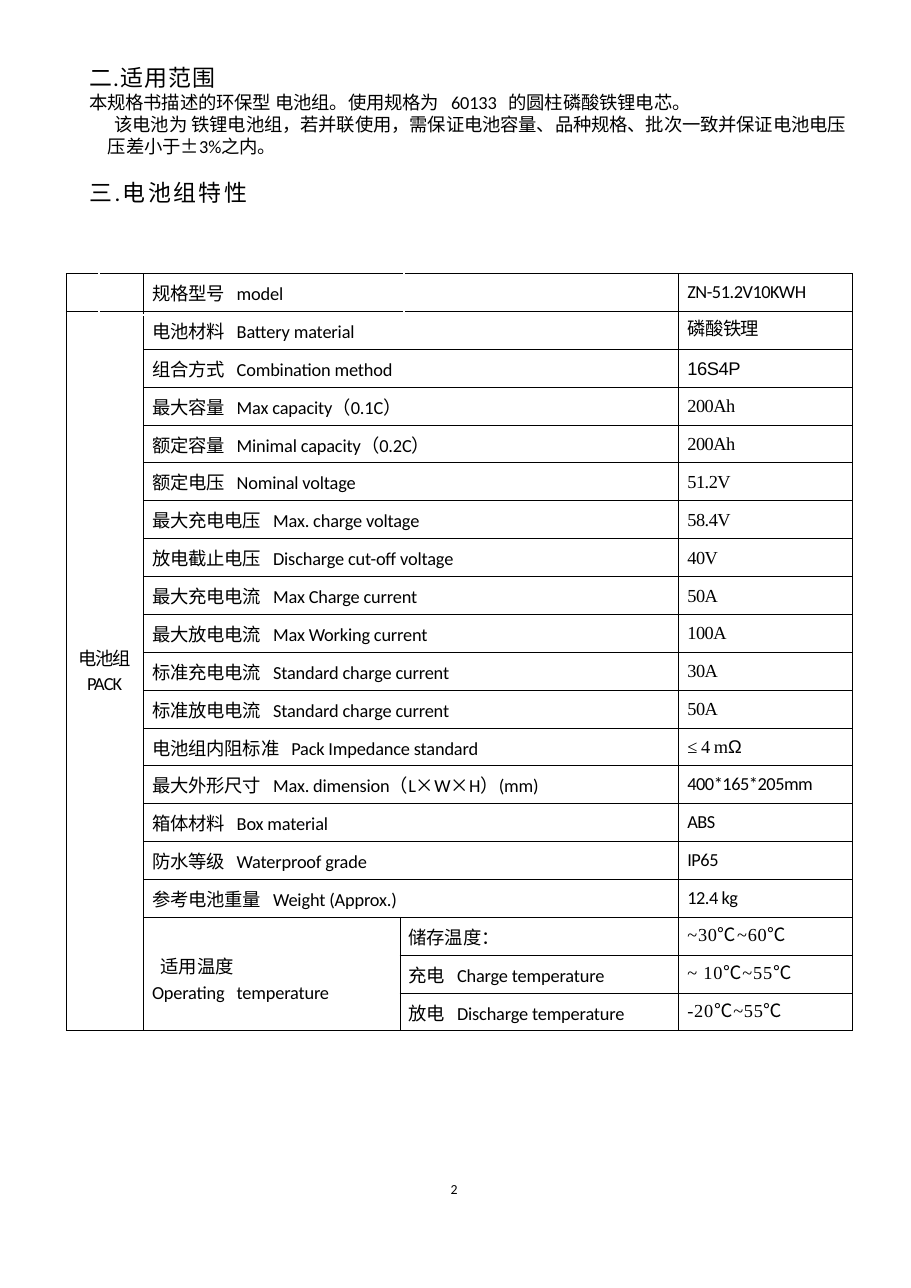
from itertools import groupby

from lxml.etree import SubElement
from pptx import Presentation
from pptx.dml.color import RGBColor
from pptx.enum.shapes import MSO_SHAPE
from pptx.enum.text import MSO_ANCHOR, MSO_AUTO_SIZE, PP_ALIGN
from pptx.oxml.ns import qn
from pptx.util import Inches, Pt

BLACK = RGBColor(0x00, 0x00, 0x00)
WHITE = RGBColor(0xFF, 0xFF, 0xFF)
CHINESE, LATIN, SERIF, SANS = "Noto Sans CJK SC", "Calibri", "Times New Roman", "Arial"
COLUMNS, ROWS = 827, 1169  # fine page grid
GAP = "|"  # marks a widened space between words

# Label, value, Latin font of the value
PROPERTIES = [
    ("规格型号|model", "ZN-51.2V10KWH", LATIN),
    ("电池材料|Battery material", "磷酸铁理", LATIN),
    ("组合方式|Combination method", "16S4P", SANS),
    ("最大容量|Max capacity（0.1C）", "200Ah", SERIF),
    ("额定容量|Minimal capacity（0.2C）", "200Ah", SERIF),
    ("额定电压|Nominal voltage", "51.2V", SERIF),
    ("最大充电电压|Max. charge voltage", "58.4V", SERIF),
    ("放电截止电压|Discharge cut-off voltage", "40V", SERIF),
    ("最大充电电流|Max Charge current", "50A", SERIF),
    ("最大放电电流|Max Working current", "100A", SERIF),
    ("标准充电电流|Standard charge current", "30A", SERIF),
    ("标准放电电流|Standard charge current", "50A", SERIF),
    ("电池组内阻标准|Pack Impedance standard", "≤ 4 mΩ", SERIF),
    ("最大外形尺寸|Max. dimension（L×W×H）(mm)", "400*165*205mm", LATIN),
    ("箱体材料|Box material", "ABS", LATIN),
    ("防水等级|Waterproof grade", "IP65", LATIN),
    ("参考电池重量|Weight (Approx.)", "12.4 kg", LATIN),
]
TEMPERATURES = [
    ("储存温度：", "~30℃~60℃"),
    ("充电|Charge temperature", "~ 10℃~55℃"),
    ("放电|Discharge temperature", "-20℃~55℃"),
]


def font_for(char, latin):
    """Choose the font of one character by its script."""
    if ord(char) > 0x2E7F or char in "℃×±":
        return CHINESE
    return SANS if char == "Ω" else latin


class SpecificationPage:
    def __init__(self, deck):
        self.page = deck.slides.add_slide(deck.slide_layouts[1])
        self.column = deck.slide_width / COLUMNS
        self.row = deck.slide_height / ROWS

    def area(self, left, top, width, height):
        return (round(left * self.column), round(top * self.row),
                round(width * self.column), round(height * self.row))

    def fill_para(self, para, text, latin=LATIN, size=12, spacing=-0.1, **layout):
        """Fill a paragraph, with one span per font."""
        layout = {"line_spacing": Pt(14.4), "space_before": Pt(0),
                  "alignment": PP_ALIGN.LEFT} | layout
        indent = {"marL": layout.pop("margin", 0), "indent": layout.pop("indent", 0)}
        for name, value in layout.items():
            setattr(para, name, value)
        properties = para._p.get_or_add_pPr()
        for name, inches in indent.items():
            properties.set(name, str(Inches(inches)))
        SubElement(properties, qn("a:buNone"))
        for (font, is_gap), chars in groupby(
                text, lambda char: (font_for(char, latin), char == GAP)):
            span = para.add_run()
            span.text = " " if is_gap else "".join(chars)
            for name, value in {"size": Pt(size), "name": font, "bold": False}.items():
                setattr(span.font, name, value)
            span.font.color.rgb = BLACK
            marks = span._r.get_or_add_rPr()
            marks.set("spc", str(round((5 if is_gap else spacing) * 100)))
            SubElement(marks, qn("a:ea")).set("typeface", font)

    def text(self, box, lines, wrap=True):
        """Fill a text shape; each line is a pair of text and format."""
        frame = box.text_frame
        settings = {"margin_left": 0, "margin_top": 0, "margin_right": 0,
                    "margin_bottom": 0, "word_wrap": wrap,
                    "auto_size": MSO_AUTO_SIZE.NONE, "vertical_anchor": MSO_ANCHOR.TOP}
        for name, value in settings.items():
            setattr(frame, name, value)
        for number, (words, style) in enumerate(lines):
            para = frame.add_paragraph() if number else frame.paragraphs[0]
            self.fill_para(para, words, **style)

    def placeholder(self, index, area, lines):
        box = self.page.placeholders[index]
        box.left, box.top, box.width, box.height = self.area(*area)
        self.text(box, lines)

    def text_box(self, area, lines):
        self.text(self.page.shapes.add_textbox(*self.area(*area)), lines, wrap=False)

    def outline(self, area, color, width):
        frame = self.page.shapes.add_shape(MSO_SHAPE.RECTANGLE, *self.area(*area))
        frame.shadow.inherit = False
        frame.fill.background()
        frame.line.color.rgb = color
        frame.line.width = Pt(width)

    def cell(self, cell, lines, lower=0.0, **style):
        """Set the lines of a table cell, moved down a little if asked."""
        cell.margin_top = Inches(lower)
        for number, line in enumerate(lines):
            frame = cell.text_frame
            para = frame.add_paragraph() if number else frame.paragraphs[0]
            self.fill_para(para, line, **style)

    def table(self, area, widths, row_count):
        box = self.page.shapes.add_table(row_count, len(widths), *self.area(*area))
        table = box.table
        for name in ("first_row", "horz_banding"):
            setattr(table, name, False)
        for column, width in zip(table.columns, widths):
            column.width = round(width * self.column)
        for cell in table.iter_cells():
            for name in ("margin_left", "margin_right", "margin_top", "margin_bottom"):
                setattr(cell, name, 0)
            cell.vertical_anchor = MSO_ANCHOR.MIDDLE
            cell.text_frame.paragraphs[0].font.size = Pt(12)
            self.borders(cell)
            cell.fill.background()
        return table

    def borders(self, cell):
        properties = cell._tc.get_or_add_tcPr()
        for side in ("lnL", "lnR", "lnT", "lnB"):
            line = SubElement(properties, qn(f"a:{side}"), w=str(Pt(0.25)))
            fill = SubElement(line, qn("a:solidFill"))
            SubElement(fill, qn("a:srgbClr"), val=str(BLACK))


def main():
    deck = Presentation()
    deck.slide_width, deck.slide_height = Inches(8.27), Inches(11.69)
    sheet = SpecificationPage(deck)

    # Headings and scope
    heading = {"size": 15, "line_spacing": Pt(17), "margin": 0.03}
    sheet.placeholder(0, (78, 59, 696, 24),
                      [("二.适用范围", heading | {"spacing": 0.7})])
    sheet.placeholder(1, (78, 83, 696, 151), [
        ("本规格书描述的环保型 电池组。使用规格为|60133|的圆柱磷酸铁锂电芯。",
         {"margin": 0.03}),
        ("该电池为 铁锂电池组，若并联使用，需保证电池容量、品种规格、批次一致"
         "并保证电池电压压差小于±3%之内。", {"margin": 0.2, "indent": 0.06}),
        ("三.电池组特性", heading | {"spacing": 1.6, "space_before": Pt(15)}),
    ])

    # Property table
    row_count = len(PROPERTIES) + len(TEMPERATURES)
    table = sheet.table((60, 248, 714, 688), (70, 233, 253, 158), row_count)
    for number, (label, value, font) in enumerate(PROPERTIES):
        table.cell(number, 1).merge(table.cell(number, 2))
        sheet.cell(table.cell(number, 1), [label], lower=0.05, margin=0.08)
        sheet.cell(table.cell(number, 3), [value], latin=font, margin=0.08,
                   spacing=-0.3)

    # Temperature rows
    first = len(PROPERTIES)
    for number, (label, value) in enumerate(TEMPERATURES, first):
        sheet.cell(table.cell(number, 2), [label], lower=0.05, margin=0.08)
        sheet.cell(table.cell(number, 3), [value], latin=SERIF, margin=0.08,
                   spacing=0.5)
    table.cell(first, 1).merge(table.cell(row_count - 1, 1))
    sheet.cell(table.cell(first, 1), ["适用温度", "Operating|temperature"],
               lower=0.09, margin=0.08, line_spacing=Pt(17))
    table.cell(first, 1).text_frame.paragraphs[0]._p.pPr.set("marL", str(Inches(0.16)))

    # Group label
    table.cell(1, 0).merge(table.cell(row_count - 1, 0))
    sheet.cell(table.cell(1, 0), ["电池组", "PACK"], spacing=-0.6,
               line_spacing=Pt(16), alignment=PP_ALIGN.CENTER)

    # White frame and page number
    sheet.outline((90, 222, 277, 64), WHITE, 1)
    sheet.text_box((409, 1073, 8, 14), [("2", {"size": 9, "line_spacing": Pt(10)})])

    deck.save("out.pptx")


if __name__ == "__main__":
    main()
